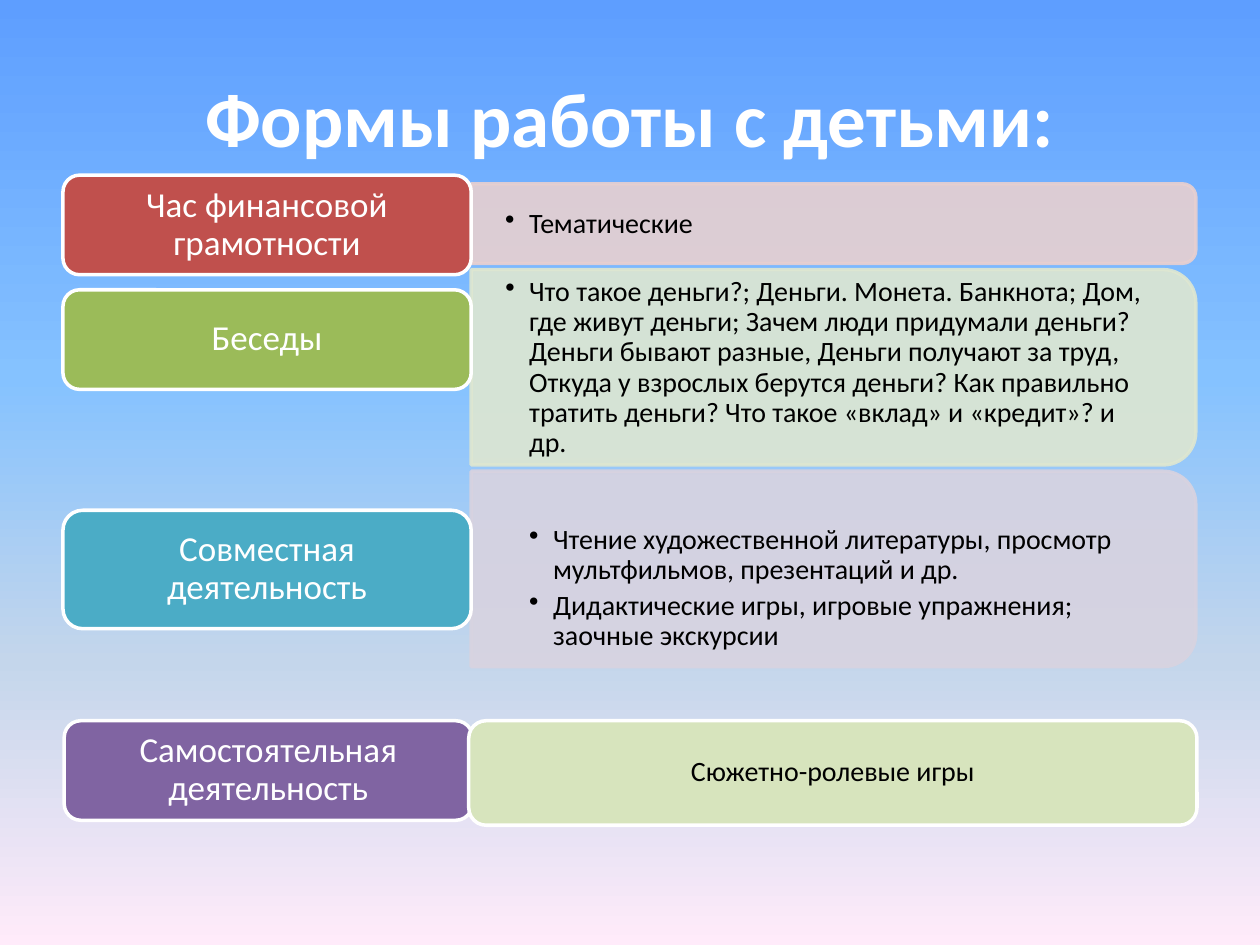
from lxml import etree
from pptx import Presentation
from pptx.dml.color import RGBColor
from pptx.enum.shapes import MSO_SHAPE
from pptx.enum.text import MSO_ANCHOR, PP_ALIGN
from pptx.oxml.ns import qn
from pptx.util import Inches, Pt

ROUND = MSO_SHAPE.ROUNDED_RECTANGLE
TAB = MSO_SHAPE.ROUND_2_SAME_RECTANGLE
MIDDLE = MSO_ANCHOR.MIDDLE
CENTER = PP_ALIGN.CENTER
LEFT = PP_ALIGN.LEFT

WHITE = RGBColor(0xFF, 0xFF, 0xFF)
BLACK = RGBColor(0x00, 0x00, 0x00)
RED = RGBColor(0xC0, 0x50, 0x4D)
GREEN = RGBColor(0x9B, 0xBB, 0x59)
TEAL = RGBColor(0x4B, 0xAC, 0xC6)
PURPLE = RGBColor(0x80, 0x64, 0xA2)
LIME = RGBColor(0xD7, 0xE4, 0xBD)
PINK = RGBColor(0xE8, 0xD0, 0xD0)
MINT = RGBColor(0xDE, 0xE7, 0xD1)
LILAC = RGBColor(0xD8, 0xD3, 0xE0)
SKY = [(0, "5E9EFF"), (40, "85C2FF"), (70, "C4D6EB"), (100, "FFEBFA")]


def add_block(kind, x, y, w, h, fill, line):
    block = slide.shapes.add_shape(kind, Inches(x), Inches(y), Inches(w), Inches(h))
    block.shadow.inherit = False
    block.fill.solid()
    block.fill.fore_color.rgb = fill
    block.line.color.rgb = line
    block.line.width = Pt(2)
    return block


def set_text(shape, lines, size, color, align, pad_x, pad_y):
    frame = shape.text_frame
    frame.word_wrap = True
    frame.vertical_anchor = MIDDLE
    frame.margin_left = frame.margin_right = Inches(pad_x)
    frame.margin_top = frame.margin_bottom = Inches(pad_y)
    frame.text = "\n".join(lines)
    for para in frame.paragraphs:
        para.alignment = align
        para.line_spacing = 0.9
        para.font.name = "Calibri"
        para.font.size = Pt(size)
        para.font.color.rgb = color
    return frame


prs = Presentation()
prs.slide_width = Inches(10)
prs.slide_height = Inches(7.5)
slide = prs.slides.add_slide(prs.slide_layouts[6])

back = slide.background.fill
back.gradient()
back.gradient_angle = 270
stops = slide.element.find(".//" + qn("a:gsLst"))
for stop in list(stops):
    stops.remove(stop)
for place, shade in SKY:
    stop = etree.SubElement(stops, qn("a:gs"), pos=str(place * 1000))
    etree.SubElement(stop, qn("a:srgbClr"), val=shade)

title = slide.shapes.add_textbox(Inches(0.5), Inches(0.3), Inches(9), Inches(1.25))
frame = set_text(title, ["Формы работы с детьми:"], 44, WHITE, CENTER, 0.1, 0.05)
frame.paragraphs[0].line_spacing = 1
frame.paragraphs[0].font.bold = True

panels = [
    (1.46, 0.63, PINK, 1.5, 0.57, 5.73, 0.19, 0.14, ["Тематические"]),
    (2.14, 1.55, MINT, 2.22, 1.4, 5.68, 0.19, 0.14, [
        "Что такое деньги?; Деньги. Монета. Банкнота; Дом, где живут деньги; "
        "Зачем люди придумали деньги? Деньги бывают разные, Деньги получают за труд, "
        "Откуда у взрослых берутся деньги? Как правильно тратить деньги? "
        "Что такое «вклад» и «кредит»? и др."]),
    (3.74, 1.55, LILAC, 3.82, 1.4, 5.68, 0.38, 0.44, [
        "Чтение художественной литературы, просмотр мультфильмов, презентаций и др.",
        "Дидактические игры, игровые упражнения; заочные экскурсии"]),
]
wide = 5.75
for y, h, color, top, tall, span, indent, pad, lines in panels:
    shift = (wide - h) / 2
    panel = add_block(TAB, 3.74 + shift, y - shift, h, wide, color, color)
    panel.rotation = 90
    for tint in panel.element.spPr.iter(qn("a:srgbClr")):
        etree.SubElement(tint, qn("a:alpha"), val="90000")
    box = slide.shapes.add_textbox(Inches(3.74), Inches(top), Inches(span), Inches(tall))
    frame = set_text(box, lines, 16, BLACK, LEFT, 0.27, 0.14)
    frame.margin_top = Inches(pad)
    for para in frame.paragraphs:
        para.space_after = Pt(3)
        props = para._p.get_or_add_pPr()
        props.set("marL", str(Inches(indent)))
        props.set("indent", str(-Inches(0.19)))
        mark = etree.Element(qn("a:buChar"), char="•")
        props.find(qn("a:defRPr")).addprevious(mark)

labels = [
    (0.5, 1.39, 3.24, 0.79, RED, "Час финансовой грамотности", 20, WHITE),
    (0.5, 2.3, 3.24, 0.79, GREEN, "Беседы", 20, WHITE),
    (0.5, 4.05, 3.24, 0.94, TEAL, "Совместная деятельность", 20, WHITE),
    (0.51, 5.72, 3.24, 0.79, PURPLE, "Самостоятельная деятельность", 20, WHITE),
    (3.72, 5.72, 5.78, 0.83, LIME, "Сюжетно-ролевые игры", 16, BLACK),
]
for x, y, w, h, fill, words, size, color in labels:
    label = add_block(ROUND, x, y, w, h, fill, WHITE)
    set_text(label, [words], size, color, CENTER, 0.08, 0.04)

prs.save("out.pptx")
